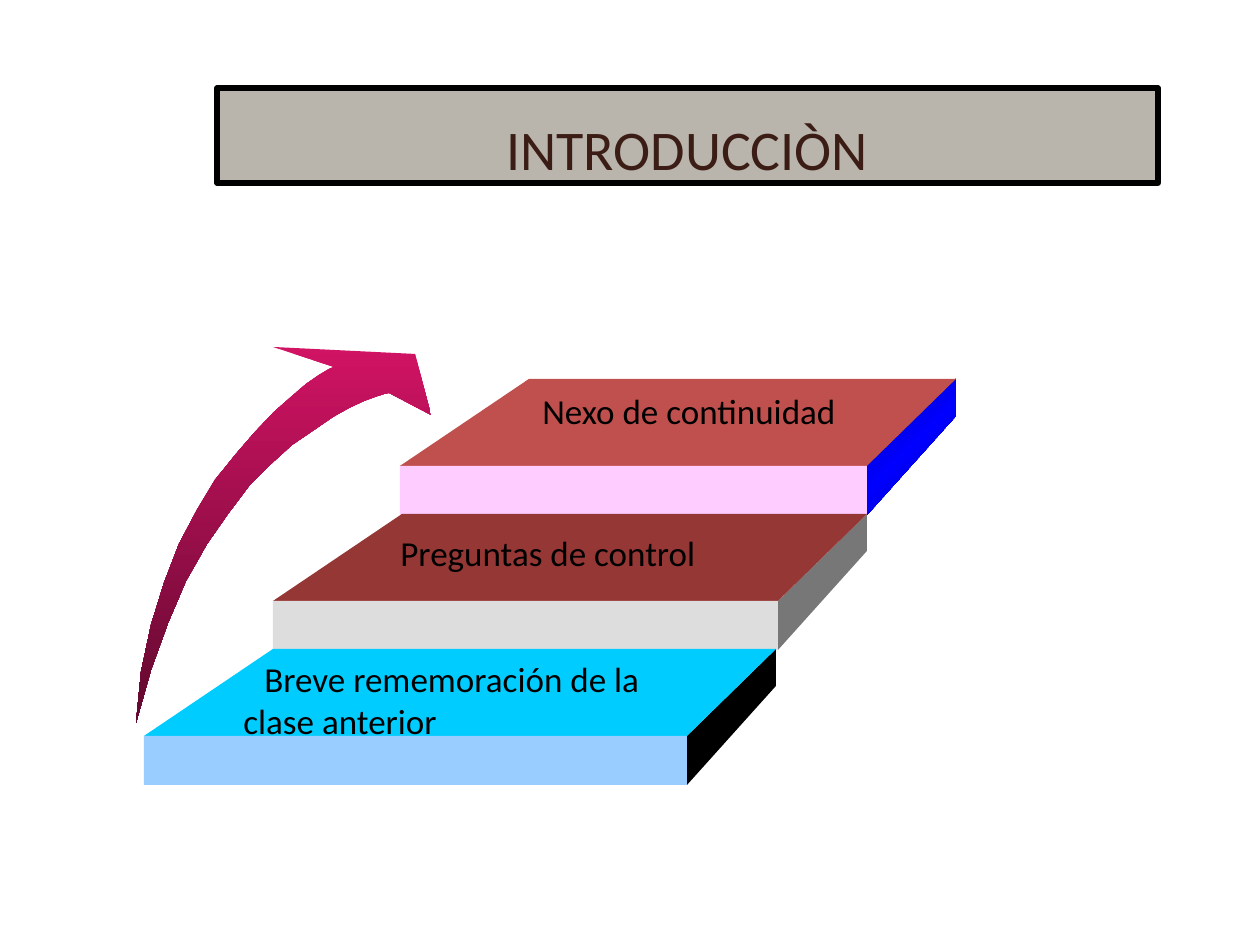
import dataclasses

import lxml.etree
import pptx
import pptx.dml.color
import pptx.enum.shapes
import pptx.enum.text
import pptx.oxml.ns
import pptx.util

SCALE = 914400 / 126


@dataclasses.dataclass(frozen=True)
class Theme:
    font: str = "Calibri"
    title_size: int = 32
    label_size: int = 20
    text: str = "000000"
    title_text: str = "3B1D15"
    title_fill: str = "B9B5AD"
    title_line: str = "000000"
    control: str = "953735"
    nexus: str = "C0504D"
    nexus_front: str = "FFCCFF"
    control_front: str = "DDDDDD"
    control_side: str = "777777"
    recall: str = "00CCFF"
    recall_front: str = "99CCFF"
    recall_side: str = "000000"
    nexus_side: tuple = ((0, "0000B6"), (50, "0000FF"), (100, "0000B6"))
    arrow: tuple = ((0, "D11364"), (100, "61092E"))


THEME = Theme()
STEP_DEPTH = 87
STEP_HEIGHT = 49
ARROW_POINTS = [
    (136, 723), (141, 672), (151, 625), (164, 583), (179, 544), (197, 510),
    (215, 480), (236, 454), (255, 432), (274, 412), (291, 397), (306, 384),
    (319, 375), (329, 369), (334, 367),
    (273, 347), (415, 354), (431, 415), (389, 393),
    (384, 394), (375, 397), (364, 401), (349, 408), (333, 417), (314, 430),
    (292, 445), (271, 464), (249, 486), (228, 514), (207, 544), (186, 581),
    (168, 623), (151, 670),
]


def px(length):
    return pptx.util.Emu(round(length * SCALE))


def rgb(value):
    return pptx.dml.color.RGBColor.from_string(value)


def set_values(target, values):
    for name, value in values.items():
        setattr(target, name, value)


def paint(shape, color, line=None, weight=0):
    shape.shadow.inherit = False
    shape.fill.solid()
    shape.fill.fore_color.rgb = rgb(color)
    if line:
        shape.line.color.rgb = rgb(line)
        shape.line.width = pptx.util.Pt(weight)
    else:
        shape.line.fill.background()


def paint_gradient(shape, stops, angle):
    shape.fill.gradient()
    shape.fill.gradient_angle = 360 - angle
    name = pptx.oxml.ns.qn
    stop_list = next(shape._element.spPr.iter(name("a:gsLst")))
    for stop in list(stop_list):
        stop_list.remove(stop)
    for position, color in stops:
        stop = lxml.etree.SubElement(stop_list, name("a:gs"), pos=str(position * 1000))
        lxml.etree.SubElement(stop, name("a:srgbClr"), val=color)


def add_polygon(page, points, color):
    builder = page.shapes.build_freeform(*points[0], scale=SCALE)
    builder.add_line_segments(points[1:], close=True)
    shape = builder.convert_to_shape()
    paint(shape, color)
    return shape


def add_rectangle(page, place, color, line=None, weight=0):
    kind = pptx.enum.shapes.MSO_SHAPE.RECTANGLE
    shape = page.shapes.add_shape(kind, *map(px, place))
    paint(shape, color, line, weight)
    return shape


def add_step(page, left, top, width, face, front, side):
    right = left + width
    back = top - STEP_DEPTH
    far = right + 89
    side_points = [(right, top), (far, back), (far, back + 37), (right, top + STEP_HEIGHT)]
    side_shape = add_polygon(page, side_points, THEME.text if isinstance(side, tuple) else side)
    if isinstance(side, tuple):
        paint_gradient(side_shape, side, 45)
    add_polygon(page, [(left, top), (left + 129, back), (far, back), (right, top)], face)
    add_rectangle(page, (left, top, width, STEP_HEIGHT), front)


def write_text(box, text, size, color, align, top_margin=None, indent=0):
    frame = box.text_frame
    set_values(frame, {
        "word_wrap": True,
        "vertical_anchor": pptx.enum.text.MSO_ANCHOR.TOP,
    })
    if top_margin is not None:
        set_values(frame, {"margin_top": px(top_margin), "margin_bottom": 0})
    para = frame.paragraphs[0]
    para.alignment = align
    if indent:
        para._p.get_or_add_pPr().set("indent", str(px(indent)))
    span = para.add_run()
    span.text = text
    set_values(span.font, {"name": THEME.font, "size": pptx.util.Pt(size)})
    span.font.color.rgb = rgb(color)


def add_label(page, place, text, fill=None, indent=0):
    if fill:
        box = add_rectangle(page, place, fill, fill, 0.75)
    else:
        box = page.shapes.add_textbox(*map(px, place))
    left = pptx.enum.text.PP_ALIGN.LEFT
    write_text(box, text, THEME.label_size, THEME.text, left, indent=indent)


def add_title(page, text):
    box = add_rectangle(page, (217, 88, 941, 95), THEME.title_fill, THEME.title_line, 3)
    center = pptx.enum.text.PP_ALIGN.CENTER
    write_text(box, text, THEME.title_size, THEME.title_text, center, top_margin=27)


def main():
    deck = pptx.Presentation()
    set_values(deck, {"slide_width": px(1260), "slide_height": px(945)})
    page = deck.slides.add_slide(deck.slide_layouts[6])

    steps = [
        (400, 466, 467, THEME.nexus, THEME.nexus_front, THEME.nexus_side),
        (273, 601, 505, THEME.control, THEME.control_front, THEME.control_side),
        (144, 736, 543, THEME.recall, THEME.recall_front, THEME.recall_side),
    ]
    for step in steps:
        add_step(page, *step)

    arrow = add_polygon(page, ARROW_POINTS, THEME.text)
    paint_gradient(arrow, THEME.arrow, 90)

    add_label(page, (388, 525, 386, 54), "Preguntas de control", fill=THEME.control)
    add_label(page, (231, 651, 455, 97), "Breve rememoración de la clase anterior", indent=21)
    add_label(page, (530, 383, 426, 54), "Nexo de continuidad")
    add_title(page, "INTRODUCCIÒN")
    deck.save("out.pptx")


if __name__ == "__main__":
    main()
